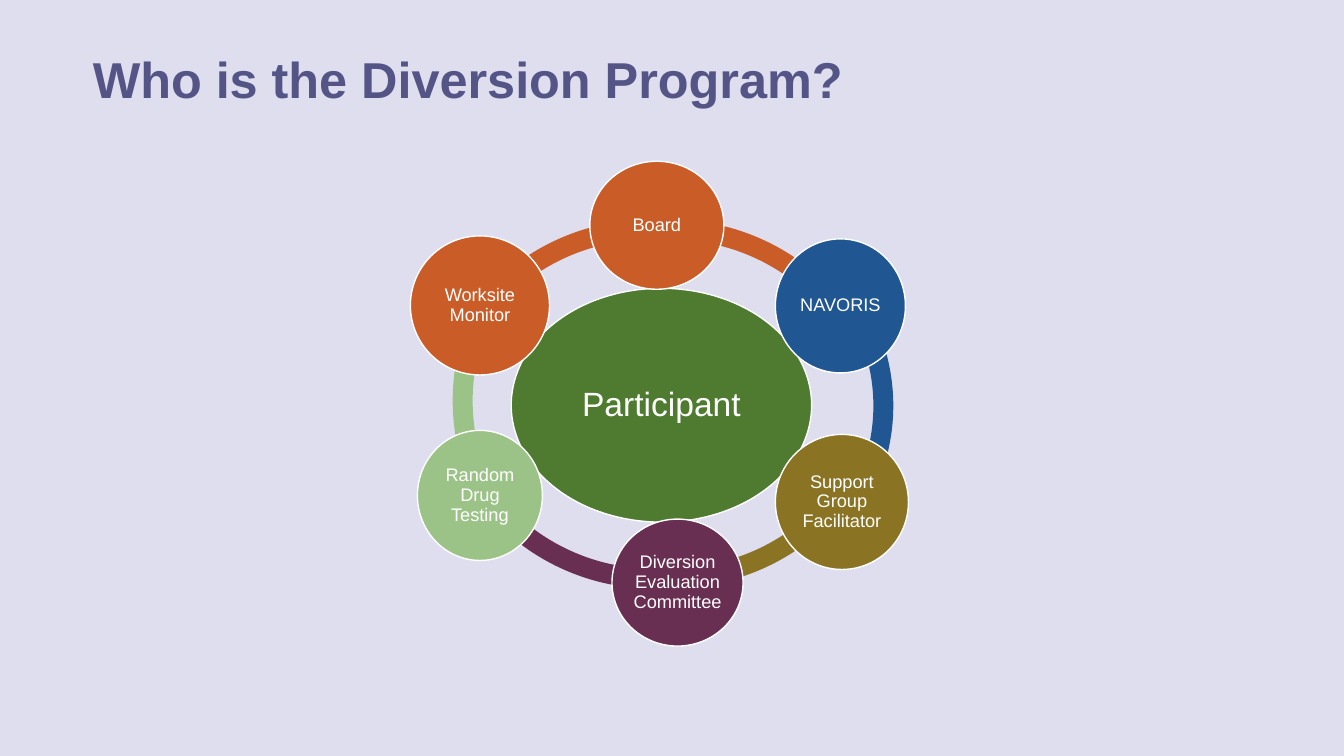
from pptx import Presentation
from pptx.dml.color import RGBColor
from pptx.enum import shapes, text
from pptx.util import Inches, Pt

COLORS = {
    "background": "DEDEEE", "title": "545487", "white": "FFFFFF",
    "green": "4E7B2F", "orange": "CA5C28", "blue": "205793",
    "olive": "8A7424", "plum": "692F53", "mint": "9CC387",
}
TITLE = "Who is the Diversion Program?"

# Ring arcs: color, (left, top, width, height), start and end in degrees
ARCS = [
    ("orange", (4.24, 2.18, 4.39, 4.39), 218.78, 272.2),
    ("mint", (4.49, 1.78, 4.39, 4.39), 153.9, 206.1),
    ("plum", (4.29, 1.45, 4.39, 4.39), 83.77, 143.66),
    ("olive", (4.48, 1.44, 4.39, 4.39), 38.77, 88.77),
    ("blue", (3.99, 1.83, 4.87, 4.39), 332.59, 26.49),
    ("orange", (4.46, 2.18, 4.39, 4.39), 266.25, 321.41),
]
ARC_THICKNESS = 0.045
DEGREE = 60000 / 100000  # one degree as a normalized adjustment

# Circles: label, color, (left, top, width, height), text size
CIRCLES = [
    ("Participant", "green", (5.07, 2.86, 2.98, 2.32), 24),
    ("Board", "orange", (5.85, 1.6, 1.33, 1.27), 13),
    ("NAVORIS", "blue", (7.69, 2.37, 1.29, 1.33), 13),
    ("Support Group Facilitator", "olive", (7.69, 4.31, 1.32, 1.34), 13),
    ("Diversion Evaluation Committee", "plum", (6.07, 5.15, 1.3, 1.26), 13),
    ("Random Drug Testing", "mint", (4.14, 4.27, 1.24, 1.29), 13),
    ("Worksite Monitor", "orange", (4.07, 2.34, 1.38, 1.38), 13),
]


def color(name):
    return RGBColor.from_string(COLORS[name])


def add_filled(slide, kind, box, fill):
    part = slide.shapes.add_shape(kind, *map(Inches, box))
    part.shadow.inherit = False
    part.fill.solid()
    part.fill.fore_color.rgb = color(fill)
    return part


def write(frame, words, size, ink, align, anchor, bold=False):
    frame.text = words
    frame.word_wrap = True
    frame.auto_size = text.MSO_AUTO_SIZE.NONE
    frame.vertical_anchor = anchor
    frame.margin_left = frame.margin_right = 0
    frame.margin_top = frame.margin_bottom = 0
    paragraph = frame.paragraphs[0]
    paragraph.alignment = align
    font = paragraph.runs[0].font
    font.name, font.size, font.bold = "Arial", Pt(size), bold
    font.color.rgb = color(ink)
    return paragraph


def main():
    deck = Presentation()
    deck.slide_width, deck.slide_height = Inches(13.33), Inches(7.5)
    slide = deck.slides.add_slide(deck.slide_layouts[5])
    slide.background.fill.solid()
    slide.background.fill.fore_color.rgb = color("background")

    # Title
    title = slide.shapes.title
    title.left, title.top = Inches(0.92), Inches(0.48)
    title.width, title.height = Inches(11.5), Inches(0.85)
    write(title.text_frame, TITLE, 36, "title",
          text.PP_ALIGN.LEFT, text.MSO_ANCHOR.TOP, bold=True)

    # Ring behind the circles
    for fill, box, start, end in ARCS:
        arc = add_filled(slide, shapes.MSO_SHAPE.BLOCK_ARC, box, fill)
        arc.line.fill.background()
        arc.adjustments[0] = start * DEGREE
        arc.adjustments[1] = end * DEGREE
        arc.adjustments[2] = ARC_THICKNESS

    # Participant and the people around
    for label, fill, box, size in CIRCLES:
        circle = add_filled(slide, shapes.MSO_SHAPE.OVAL, box, fill)
        circle.line.color.rgb = color("white")
        circle.line.width = Pt(1)
        paragraph = write(circle.text_frame, label, size, "white",
                          text.PP_ALIGN.CENTER, text.MSO_ANCHOR.MIDDLE)
        paragraph.line_spacing = 0.9

    deck.save("out.pptx")


if __name__ == "__main__":
    main()
